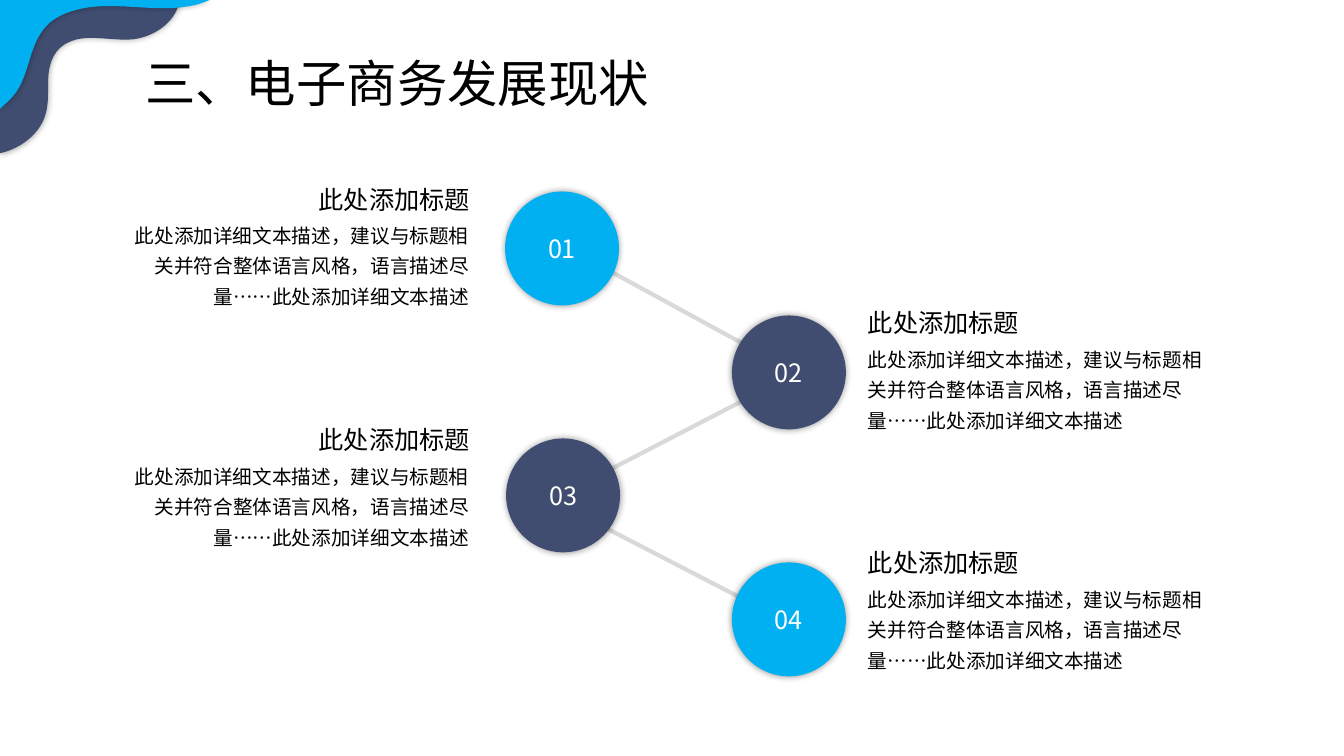
from lxml.etree import SubElement
from pptx import Presentation
from pptx.dml.color import RGBColor
from pptx.enum.shapes import MSO_SHAPE as Preset
from pptx.enum.text import MSO_ANCHOR as Anchor, MSO_AUTO_SIZE as AutoSize, PP_ALIGN as Align
from pptx.oxml.ns import qn
from pptx.util import Emu, Pt

PX = 9144
FONT = "Noto Sans CJK SC"
BLUE = RGBColor(0x00, 0xB0, 0xF0)
NAVY = RGBColor(0x40, 0x4D, 0x70)
GREY = RGBColor(0xD9, 0xD9, 0xD9)
BLACK = RGBColor(0x00, 0x00, 0x00)
WHITE = RGBColor(0xFF, 0xFF, 0xFF)

TITLE = "三、电子商务发展现状"
HEADING = "此处添加标题"
DETAIL = "此处添加详细文本描述，建议与标题相关并符合整体语言风格，语言描述尽量……此处添加详细文本描述"

CIRCLES = [
    ("01", BLUE, 501, 190),
    ("02", NAVY, 726, 313),
    ("03", NAVY, 502, 435),
    ("04", BLUE, 726, 558),
]
CIRCLE = 113

DESCRIPTIONS = [
    ("right", 300, 333),
    ("left", 178, 210),
    ("left", 416, 449),
    ("right", 538, 571),
]
DETAIL_LEFT = {"left": 119, "right": 851}
HEADING_LEFT = {"left": 252, "right": 851}
ALIGN = {"left": Align.RIGHT, "right": Align.LEFT}
DETAIL_SIZE = (356, 100)
HEADING_SIZE = (224, 40)

ZIGZAG = [[(594, 263)], [(790, 370)], [(547, 496)], [(781, 617)]]
NAVY_WAVE = [
    [(53, 0)], [(178, 0)],
    [(176, 19), (156, 36), (132, 39)],
    [(110, 41), (86, 33), (68, 42)],
    [(54, 48), (49, 62), (48, 75)],
    [(47, 88), (49, 101), (45, 114)],
    [(40, 131), (24, 145), (4, 151)],
    [(0, 152)], [(0, 84)], [(5, 81)],
    [(14, 75), (22, 68), (27, 60)],
    [(37, 43), (39, 23), (48, 7)],
]
BLUE_WAVE = [
    [(0, 0)], [(208, 0)], [(203, 2)],
    [(193, 6), (182, 7), (172, 8)],
    [(151, 9), (130, 6), (108, 6)],
    [(87, 6), (65, 10), (50, 22)],
    [(29, 40), (31, 68), (17, 90)],
    [(13, 96), (8, 101), (2, 106)],
    [(0, 108)],
]


def px(*lengths):
    return [Emu(length * PX) for length in lengths]


def add_outline(page, segments, close):
    start, *ends = [segment[-1] for segment in segments]
    builder = page.shapes.build_freeform(*start, scale=PX)
    builder.add_line_segments(ends, close=close)
    shape = builder.convert_to_shape()
    shape.shadow.inherit = False
    lines = list(shape._element.iter(qn("a:lnTo")))
    for line, segment in zip(lines, segments[1:]):
        if len(segment) == 3:
            line.tag = qn("a:cubicBezTo")
            for x, y in reversed(segment[:2]):
                point = SubElement(line, qn("a:pt"), x=str(x), y=str(y))
                line.insert(0, point)
    return shape


def paint(shape, color):
    shape.fill.solid()
    shape.fill.fore_color.rgb = color
    shape.line.fill.background()
    shape.shadow.inherit = False
    effects = shape._element.spPr.find(qn("a:effectLst"))
    shadow = SubElement(effects, qn("a:outerShdw"), blurRad=str(Pt(5)), dist="0",
                        dir="0", algn="ctr", rotWithShape="0")
    tint = SubElement(shadow, qn("a:srgbClr"), val="000000")
    SubElement(tint, qn("a:alpha"), val="40000")


def write(shape, text, size, color, align, spacing=None):
    para = shape.text_frame.paragraphs[0]
    para.alignment = align
    if spacing:
        para.line_spacing = spacing
    span = para.add_run()
    span.text = text
    span.font.size = Pt(size)
    span.font.name = FONT
    span.font.color.rgb = color
    SubElement(span.font._element, qn("a:ea"), typeface=FONT)


def add_text(page, bounds, text, size, align=Align.LEFT, spacing=None):
    box = page.shapes.add_textbox(*px(*bounds))
    box.text_frame.word_wrap = True
    box.text_frame.auto_size = AutoSize.SHAPE_TO_FIT_TEXT
    write(box, text, size, BLACK, align, spacing)


def add_circle(page, number, color, left, top):
    circle = page.shapes.add_shape(Preset.OVAL, *px(left, top, CIRCLE, CIRCLE))
    paint(circle, color)
    circle.text_frame.vertical_anchor = Anchor.MIDDLE
    write(circle, number, 18, WHITE, Align.CENTER)


def add_description(page, side, heading_top, detail_top):
    align = ALIGN[side]
    add_text(page, (DETAIL_LEFT[side], detail_top, *DETAIL_SIZE), DETAIL, 14, align, 1.3)
    add_text(page, (HEADING_LEFT[side], heading_top, *HEADING_SIZE), HEADING, 18, align)


def main():
    deck = Presentation()
    deck.slide_width, deck.slide_height = px(1333, 750)
    page = deck.slides.add_slide(deck.slide_layouts[6])

    zigzag = add_outline(page, ZIGZAG, close=False)
    zigzag.fill.background()
    zigzag.line.color.rgb = GREY
    zigzag.line.width = Pt(3)
    for wave, color in ((NAVY_WAVE, NAVY), (BLUE_WAVE, BLUE)):
        paint(add_outline(page, wave, close=True), color)

    add_text(page, (134, 38, 607, 75), TITLE, 36, spacing=1.14)
    for circle in CIRCLES:
        add_circle(page, *circle)
    for description in DESCRIPTIONS:
        add_description(page, *description)
    deck.save("out.pptx")


if __name__ == "__main__":
    main()
